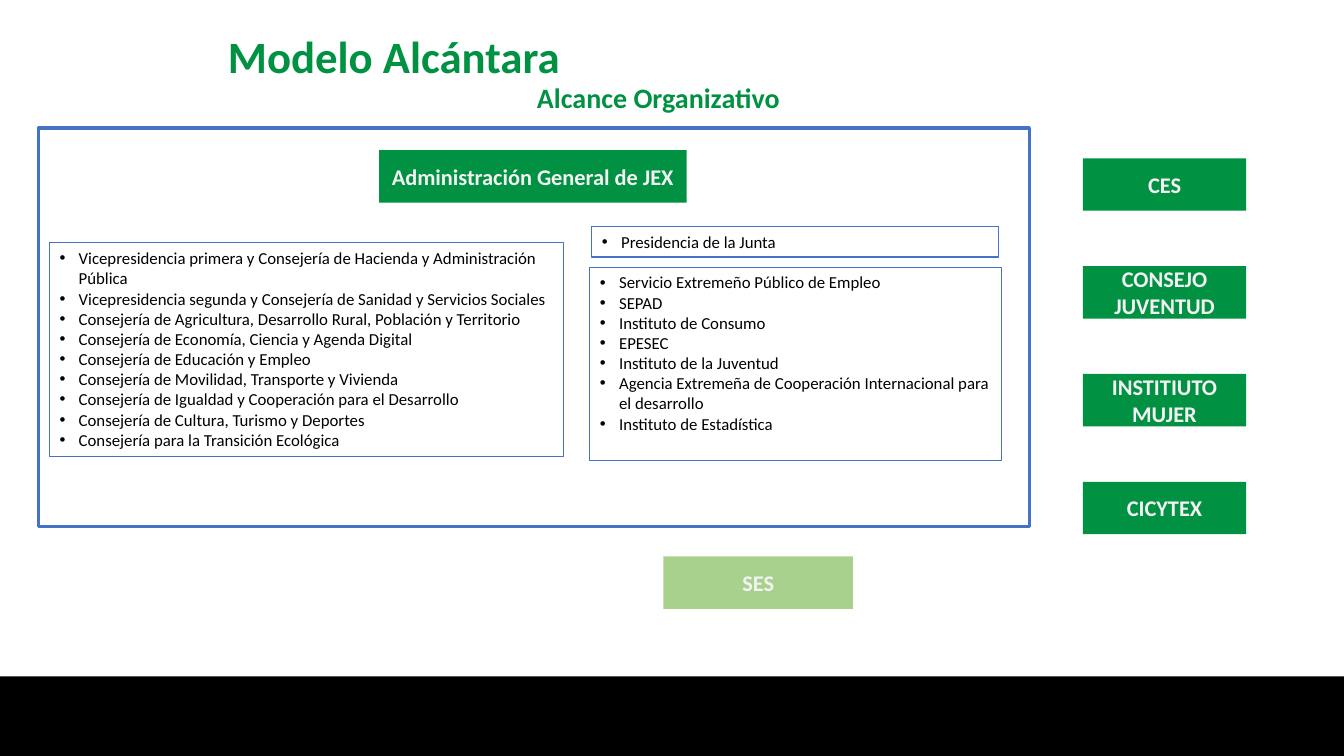
from dataclasses import dataclass

from lxml.etree import SubElement
from pptx import Presentation
from pptx.dml.color import RGBColor
from pptx.enum.shapes import MSO_SHAPE
from pptx.enum.text import MSO_ANCHOR, MSO_AUTO_SIZE, PP_ALIGN
from pptx.oxml.ns import qn
from pptx.util import Inches, Pt


@dataclass(frozen=True)
class Theme:
    """Colours, font and type sizes of the slide."""

    font: str = "Calibri"
    green: str = "009242"
    pale_green: str = "A9D18E"
    blue: str = "4472C4"
    black: str = "000000"
    light: str = "F2F2F2"
    title_size: int = 32
    subtitle_size: int = 20
    label_size: int = 16
    list_size: int = 12
    frame_line: float = 2.25
    list_line: float = 0.75
    list_indent: float = 0.19


class OrganisationSlide:
    """Places elements on a grid of ten columns and ten rows to the inch."""

    def __init__(self, presentation, theme):
        self.theme = theme
        self.unit = Inches(0.1)
        self.slide = presentation.slides.add_slide(presentation.slide_layouts[4])

    def place(self, shape, area):
        shape.left, shape.top, shape.width, shape.height = (
            round(length * self.unit) for length in area
        )

    def add_text(self, paragraph, text, size, colour, bold=False):
        run = paragraph.add_run()
        run.text = text
        run.font.name = self.theme.font
        run.font.size = Pt(size)
        run.font.bold = bold
        run.font.color.rgb = RGBColor.from_string(colour)

    def outline(self, shape, colour, width):
        shape.line.color.rgb = RGBColor.from_string(colour)
        shape.line.width = Pt(width)

    def rectangle(self, area, fill=None):
        shape = self.slide.shapes.add_shape(MSO_SHAPE.RECTANGLE, 0, 0, 0, 0)
        self.place(shape, area)
        shape.shadow.inherit = False
        shape.line.fill.background()
        if fill:
            shape.fill.solid()
            shape.fill.fore_color.rgb = RGBColor.from_string(fill)
        else:
            shape.fill.background()
        return shape

    def frame(self, area):
        self.outline(self.rectangle(area), self.theme.blue, self.theme.frame_line)

    def label(self, area, text, fill):
        text_frame = self.rectangle(area, fill).text_frame
        text_frame.word_wrap = True
        text_frame.vertical_anchor = MSO_ANCHOR.MIDDLE
        paragraph = text_frame.paragraphs[0]
        paragraph.alignment = PP_ALIGN.CENTER
        self.add_text(paragraph, text, self.theme.label_size, self.theme.light, True)

    def placeholder(self, index, area, anchor):
        shape = self.slide.placeholders[index]
        self.place(shape, area)
        text_frame = shape.text_frame
        text_frame.word_wrap = True
        text_frame.auto_size = MSO_AUTO_SIZE.NONE
        text_frame.vertical_anchor = anchor
        return shape

    def heading(self, index, area, text, size, anchor, alignment):
        shape = self.placeholder(index, area, anchor)
        paragraph = shape.text_frame.paragraphs[0]
        paragraph.alignment = alignment
        paragraph.line_spacing = 0.9
        paragraph.space_before = Pt(0)
        self.add_text(paragraph, text, size, self.theme.green, True)

    def bullet_list(self, index, area, items):
        shape = self.placeholder(index, area, MSO_ANCHOR.TOP)
        self.outline(shape, self.theme.blue, self.theme.list_line)
        text_frame = shape.text_frame
        indent = Inches(self.theme.list_indent)
        for position, item in enumerate(items):
            paragraph = text_frame.add_paragraph() if position else text_frame.paragraphs[0]
            properties = paragraph._p.get_or_add_pPr()
            properties.set("marL", str(indent))
            properties.set("indent", str(-indent))
            SubElement(properties, qn("a:buFont"), typeface="Arial")
            SubElement(properties, qn("a:buChar"), char="•")
            paragraph.alignment = PP_ALIGN.LEFT
            paragraph.space_before = Pt(0)
            self.add_text(paragraph, item, self.theme.list_size, self.theme.black)


def main():
    theme = Theme()
    presentation = Presentation()
    presentation.slide_width = Inches(13.33)
    presentation.slide_height = Inches(7.5)
    slide = OrganisationSlide(presentation, theme)

    slide.rectangle((0, 67.1, 133.3, 7.9), theme.black)
    slide.frame((3.8, 12.7, 98.3, 39.5))
    slide.heading(0, (21.6, 2.2, 56.1, 7.3), "Modelo Alcántara",
                  theme.title_size, MSO_ANCHOR.MIDDLE, PP_ALIGN.LEFT)
    slide.heading(1, (34.3, 6.9, 62, 5), "Alcance Organizativo",
                  theme.subtitle_size, MSO_ANCHOR.BOTTOM, PP_ALIGN.CENTER)

    slide.bullet_list(2, (4.9, 24.1, 51, 21.2), [
        "Vicepresidencia primera y Consejería de Hacienda y Administración Pública",
        "Vicepresidencia segunda y Consejería de Sanidad y Servicios Sociales",
        "Consejería de Agricultura, Desarrollo Rural, Población y Territorio",
        "Consejería de Economía, Ciencia y Agenda Digital",
        "Consejería de Educación y Empleo",
        "Consejería de Movilidad, Transporte y Vivienda",
        "Consejería de Igualdad y Cooperación para el Desarrollo",
        "Consejería de Cultura, Turismo y Deportes",
        "Consejería para la Transición Ecológica",
    ])
    slide.bullet_list(3, (58.7, 22.5, 40.3, 3), ["Presidencia de la Junta"])
    slide.bullet_list(4, (58.5, 26.5, 40.8, 19.2), [
        "Servicio Extremeño Público de Empleo",
        "SEPAD",
        "Instituto de Consumo",
        "EPESEC",
        "Instituto de la Juventud",
        "Agencia Extremeña de Cooperación Internacional para el desarrollo",
        "Instituto de Estadística",
    ])

    label_height = 5.2
    slide.label((37.6, 14.9, 30.5, label_height), "Administración General de JEX", theme.green)
    bodies = ["CES", "CONSEJO JUVENTUD", "INSTITIUTO MUJER", "CICYTEX"]
    for row, body in enumerate(bodies):
        slide.label((107.4, 15.7 + 10.7 * row, 16.2, label_height), body, theme.green)
    slide.label((65.8, 55.2, 18.8, label_height), "SES", theme.pale_green)

    presentation.save("out.pptx")


if __name__ == "__main__":
    main()
